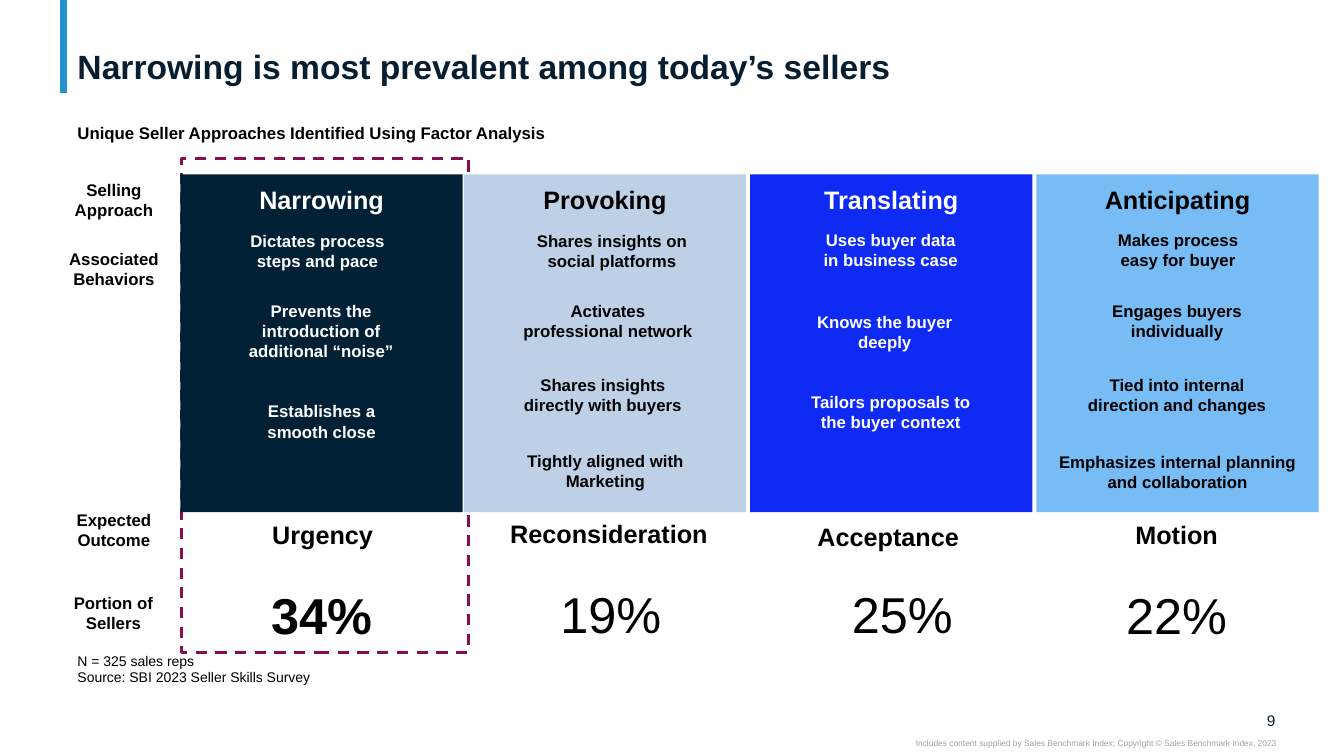
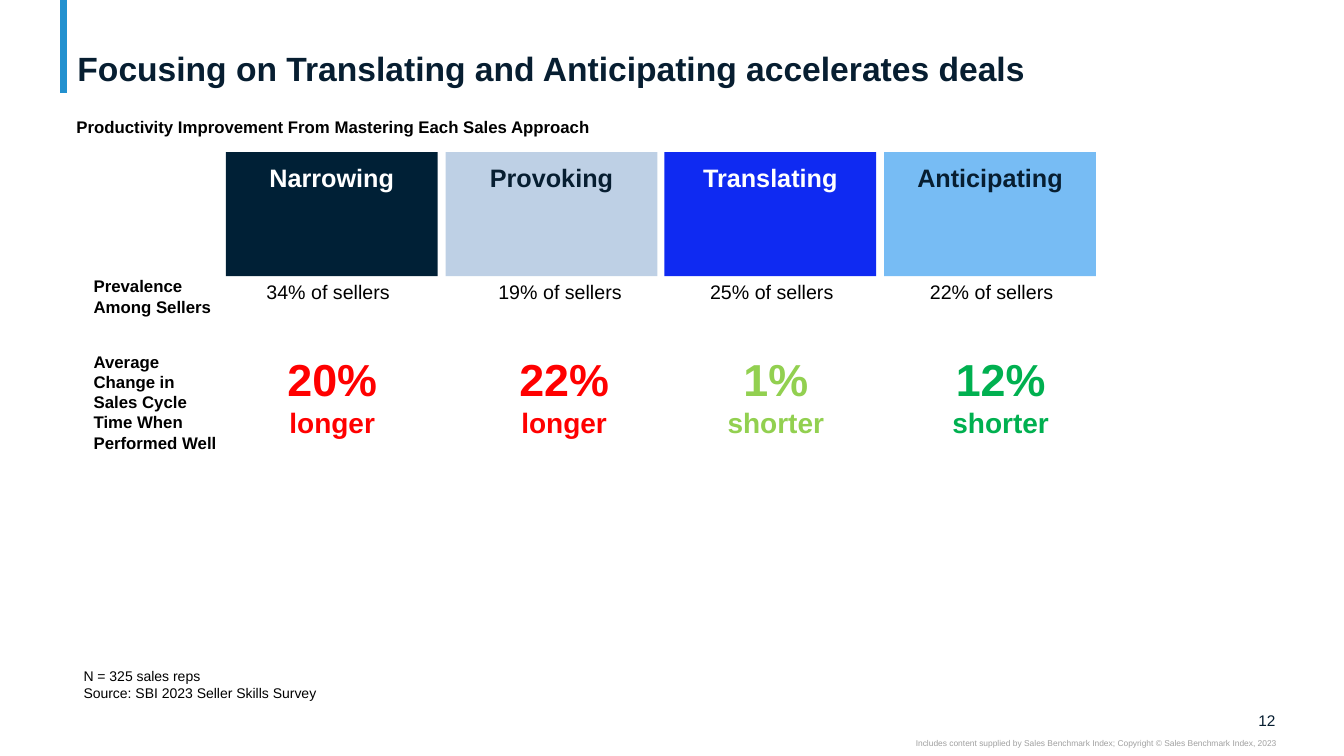
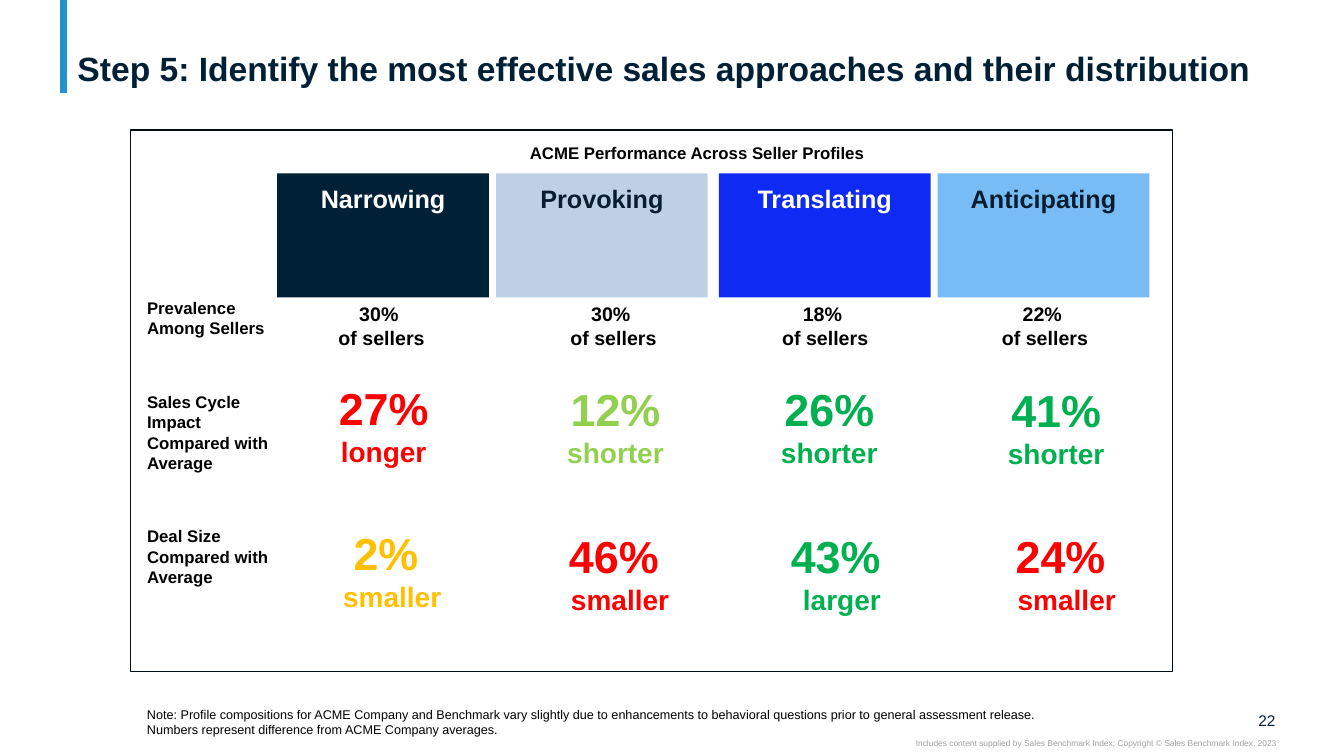
from dataclasses import dataclass
from typing import Optional

import pptx
import pptx.dml.color
import pptx.enum.dml
import pptx.enum.shapes
import pptx.enum.text
import pptx.oxml
import pptx.oxml.ns
import pptx.slide
import pptx.text.text
import pptx.util

RGBColor = pptx.dml.color.RGBColor
Align = pptx.enum.text.PP_ALIGN
Anchor = pptx.enum.text.MSO_ANCHOR
Shape = pptx.enum.shapes.MSO_SHAPE

# Shared look: 100 px make one inch
EMU_PER_PX = 9144
FONT = "Arial"
BLACK = RGBColor(0x00, 0x00, 0x00)
WHITE = RGBColor(0xFF, 0xFF, 0xFF)
INK = RGBColor(0x07, 0x1E, 0x31)
NAVY = RGBColor(0x00, 0x20, 0x36)
MIST = RGBColor(0xBE, 0xD0, 0xE5)
ROYAL = RGBColor(0x0F, 0x2A, 0xF2)
SKY = RGBColor(0x77, 0xBC, 0xF4)
ACCENT = RGBColor(0x23, 0x91, 0xCF)
PLUM = RGBColor(0x88, 0x0E, 0x4F)
FRAME = RGBColor(0x03, 0x0D, 0x15)
GREY = RGBColor(0xA0, 0xA0, 0xA0)
RED = RGBColor(0xFF, 0x00, 0x00)
AMBER = RGBColor(0xFF, 0xC0, 0x00)
LIME = RGBColor(0x92, 0xD0, 0x50)
GREEN = RGBColor(0x00, 0xB0, 0x50)

COPYRIGHT = ("Includes content supplied by Sales Benchmark Index; "
             "Copyright © Sales Benchmark Index, 2023")
SURVEY = "N = 325 sales reps\nSource: SBI 2023 Seller Skills Survey"


@dataclass(frozen=True)
class Area:
    left: int
    top: int
    width: int
    height: int

    def emu(self) -> list[int]:
        return [side * EMU_PER_PX for side in
                (self.left, self.top, self.width, self.height)]


@dataclass(frozen=True)
class Style:
    size: int
    bold: bool = False
    align: Align = Align.LEFT
    colour: RGBColor = BLACK
    second_size: Optional[int] = None  # size after a line break
    anchor: Anchor = Anchor.TOP
    insets: tuple[int, int, int, int] = (10, 5, 10, 5)
    spacing: Optional[float] = None


@dataclass(frozen=True)
class Approach:
    name: str
    fill: RGBColor
    on_dark: bool


@dataclass(frozen=True)
class Note:
    text: str
    left: int
    top: int
    width: int


@dataclass(frozen=True)
class Profile:
    left: int
    behaviors: tuple[Note, ...]
    outcome: Note
    portion: Note


@dataclass(frozen=True)
class Score:
    text: str
    left: int
    top: int
    colour: RGBColor


APPROACHES = (
    Approach("Narrowing", NAVY, True),
    Approach("Provoking", MIST, False),
    Approach("Translating", ROYAL, True),
    Approach("Anticipating", SKY, False),
)
LABEL = Style(12, True)
CENTRED_LABEL = Style(12, True, Align.CENTER)
SOURCE = Style(10)
OUTCOME = Style(18, True, Align.CENTER)


# Drawing helpers
def write(frame: pptx.text.text.TextFrame, text: str, style: Style,
          colour: Optional[RGBColor] = None) -> None:
    frame.word_wrap = True
    frame.vertical_anchor = style.anchor
    (frame.margin_left, frame.margin_top, frame.margin_right,
     frame.margin_bottom) = [inset * EMU_PER_PX for inset in style.insets]
    frame.text = text
    for para in frame.paragraphs:
        para.alignment = style.align
        para.line_spacing = style.spacing
        for index, span in enumerate(para.runs):
            size = style.second_size if index and style.second_size else style.size
            span.font.name = FONT
            span.font.size = pptx.util.Pt(size)
            span.font.bold = style.bold
            span.font.color.rgb = style.colour if colour is None else colour


def add_text(page: pptx.slide.Slide, area: Area, text: str, style: Style,
             colour: Optional[RGBColor] = None) -> None:
    write(page.shapes.add_textbox(*area.emu()).text_frame, text, style, colour)


def add_note(page: pptx.slide.Slide, note: Note, height: int, style: Style,
             colour: Optional[RGBColor] = None) -> None:
    add_text(page, Area(note.left, note.top, note.width, height),
             note.text, style, colour)


def add_card(page: pptx.slide.Slide, area: Area, approach: Approach,
             dark_text: RGBColor) -> None:
    box = page.shapes.add_shape(Shape.RECTANGLE, *area.emu())
    box.shadow.inherit = False
    box.fill.solid()
    box.fill.fore_color.rgb = approach.fill
    box.line.fill.background()
    write(box.text_frame, approach.name,
          Style(18, True, Align.CENTER, insets=(30, 10, 30, 5)),
          WHITE if approach.on_dark else dark_text)


def add_frame(page: pptx.slide.Slide, area: Area, colour: RGBColor,
              weight: float, dashed: bool = False) -> None:
    box = page.shapes.add_shape(Shape.RECTANGLE, *area.emu())
    box.shadow.inherit = False
    box.fill.background()
    box.line.color.rgb = colour
    box.line.width = pptx.util.Pt(weight)
    if dashed:
        box.line.dash_style = pptx.enum.dml.MSO_LINE.DASH


def add_page(deck, title: str, number: int, title_top: int = 4,
             title_colour: RGBColor = INK) -> pptx.slide.Slide:
    """Add a blank page with the shared accent bar, title and footer."""
    page = deck.slides.add_slide(deck.slide_layouts[6])
    bar = page.shapes.add_connector(
        pptx.enum.shapes.MSO_CONNECTOR.STRAIGHT,
        *[side * EMU_PER_PX for side in (63, 0, 63, 92)])
    bar.line.color.rgb = ACCENT
    bar.line.width = pptx.util.Pt(5)
    bar._element.spPr.append(
        pptx.oxml.parse_xml(f"<a:effectLst {pptx.oxml.ns.nsdecls('a')}/>"))
    flush = (0, 0, 0, 0)
    add_text(page, Area(1232, 705, 33, 19), str(number),
             Style(11, False, Align.RIGHT, INK, anchor=Anchor.MIDDLE, insets=flush))
    add_text(page, Area(750, 732, 516, 10), COPYRIGHT,
             Style(6, False, Align.RIGHT, GREY, insets=flush))
    add_text(page, Area(67, title_top, 1199, 84), title,
             Style(24, True, anchor=Anchor.BOTTOM, insets=(10, 0, 10, 0), spacing=0.9),
             title_colour)
    return page


def add_card_row(page: pptx.slide.Slide, lefts: tuple[int, ...], top: int) -> None:
    for approach, left in zip(APPROACHES, lefts):
        add_card(page, Area(left, top, 210, 123), approach, INK)


def add_scores(page: pptx.slide.Slide, scores: tuple[Score, ...], width: int) -> None:
    style = Style(32, True, Align.CENTER, second_size=20)
    for score in scores:
        add_text(page, Area(score.left, score.top, width, 98),
                 score.text, style, score.colour)


def add_shares(page: pptx.slide.Slide, shares: tuple[str, ...], first: int,
               top: int, bold: bool) -> None:
    for share, offset in zip(shares, (0, 230, 440, 658)):
        add_text(page, Area(first + offset, top, 151, 57), share,
                 Style(14, bold, Align.CENTER))


# Slide content
PROFILES = (
    Profile(179, (
        Note("Dictates process steps and pace", 230, 224, 170),
        Note("Prevents the introduction of additional “noise”", 224, 293, 189),
        Note("Establishes a smooth close", 234, 393, 170),
    ), Note("Urgency", 180, 510, 280), Note("34%", 259, 575, 131)),
    Profile(460, (
        Note("Shares insights on social platforms", 509, 224, 196),
        Note("Activates professional network", 505, 293, 196),
        Note("Shares insights directly with buyers", 500, 367, 196),
        Note("Tightly aligned with Marketing", 494, 442, 213),
    ), Note("Reconsideration", 464, 509, 280), Note("19%", 546, 574, 121)),
    Profile(744, (
        Note("Uses buyer data in business case", 805, 223, 157),
        Note("Knows the buyer deeply", 799, 304, 157),
        Note("Tailors proposals to the buyer context", 793, 384, 181),
    ), Note("Acceptance", 741, 512, 280), Note("25%", 835, 574, 121)),
    Profile(1028, (
        Note("Makes process easy for buyer", 1090, 223, 157),
        Note("Engages buyers individually", 1076, 293, 183),
        Note("Tied into internal direction and changes", 1059, 367, 217),
        Note("Emphasizes internal planning and collaboration", 1040, 443, 256),
    ), Note("Motion", 1027, 510, 280), Note("22%", 1107, 575, 121)),
)
ROW_LABELS = (
    Note("Selling Approach", 47, 173, 132),
    Note("Associated Behaviors", 47, 242, 132),
    Note("Expected Outcome", 47, 501, 132),
    Note("Portion of Sellers", 35, 583, 155),
)


def build_prevalence(deck) -> None:
    page = add_page(deck, "Narrowing is most prevalent among today’s sellers", 9, 2)
    add_text(page, Area(67, 117, 760, 30),
             "Unique Seller Approaches Identified Using Factor Analysis", LABEL)
    add_text(page, Area(67, 642, 485, 44), SURVEY, SOURCE)
    for label in ROW_LABELS:
        add_note(page, label, 50, CENTRED_LABEL)
    # The cards cover part of the dashed highlight
    add_frame(page, Area(180, 157, 285, 490), PLUM, 2, dashed=True)
    for approach, profile in zip(APPROACHES, PROFILES):
        add_card(page, Area(profile.left, 173, 280, 335), approach, BLACK)
        for behavior in profile.behaviors:
            add_note(page, behavior, 50, CENTRED_LABEL,
                     WHITE if approach.on_dark else BLACK)
        add_note(page, profile.outcome, 40, OUTCOME)
        add_note(page, profile.portion, 71,
                 Style(36, approach.name == "Narrowing"))


def build_productivity(deck) -> None:
    page = add_page(deck, "Focusing on Translating and Anticipating accelerates deals", 12)
    add_text(page, Area(66, 111, 637, 30),
             "Productivity Improvement From Mastering Each Sales Approach", LABEL)
    add_card_row(page, (224, 442, 659, 877), 151)
    add_note(page, Note("Prevalence Among Sellers", 83, 269, 142), 50, LABEL)
    add_shares(page, tuple(f"{share}% of sellers" for share in (34, 19, 25, 22)),
               250, 273, False)
    add_note(page, Note("Average Change in Sales Cycle Time When Performed Well",
                        83, 344, 142), 131, LABEL)
    add_scores(page, (
        Score("20%\vlonger", 254, 344, RED),
        Score("22%\vlonger", 484, 344, RED),
        Score("1%\vshorter", 694, 344, LIME),
        Score("12%\vshorter", 917, 344, GREEN),
    ), 151)
    add_text(page, Area(73, 657, 485, 44), SURVEY, SOURCE)


def build_distribution(deck) -> None:
    page = add_page(
        deck, "Step 5: Identify the most effective sales approaches and their distribution",
        22, title_colour=NAVY)
    add_frame(page, Area(129, 129, 1034, 537), FRAME, 0.75)
    add_text(page, Area(373, 137, 637, 30),
             "ACME Performance Across Seller Profiles", CENTRED_LABEL)
    add_card_row(page, (275, 492, 713, 930), 172)
    for label in (
        Note("Prevalence Among Sellers", 136, 290, 142),
        Note("Sales Cycle Impact Compared with Average", 136, 384, 142),
        Note("Deal Size Compared with Average", 136, 517, 142),
    ):
        add_note(page, label, 71, LABEL)
    add_shares(page, tuple(f"{share}% \vof sellers" for share in (30, 30, 18, 22)),
               303, 295, True)
    add_scores(page, (
        Score("27%\vlonger", 305, 373, RED),
        Score("12%\vshorter", 535, 374, LIME),
        Score("26%\vshorter", 747, 374, GREEN),
        Score("41%\vshorter", 972, 375, GREEN),
    ), 151)
    add_scores(page, (
        Score("2% \vsmaller", 303, 517, AMBER),
        Score("46% \vsmaller", 529, 520, RED),
        Score("43% \vlarger", 749, 520, GREEN),
        Score("24% \vsmaller", 972, 520, RED),
    ), 172)
    add_text(page, Area(136, 696, 944, 40),
             "Note: Profile compositions for ACME Company and Benchmark vary slightly due to "
             "enhancements to behavioral questions prior to general assessment release.\n"
             "Numbers represent difference from ACME Company averages.", Style(9))


def main() -> None:
    deck = pptx.Presentation()
    deck.slide_width = 1333 * EMU_PER_PX
    deck.slide_height = 750 * EMU_PER_PX
    build_prevalence(deck)
    build_productivity(deck)
    build_distribution(deck)
    deck.save("out.pptx")


if __name__ == "__main__":
    main()
